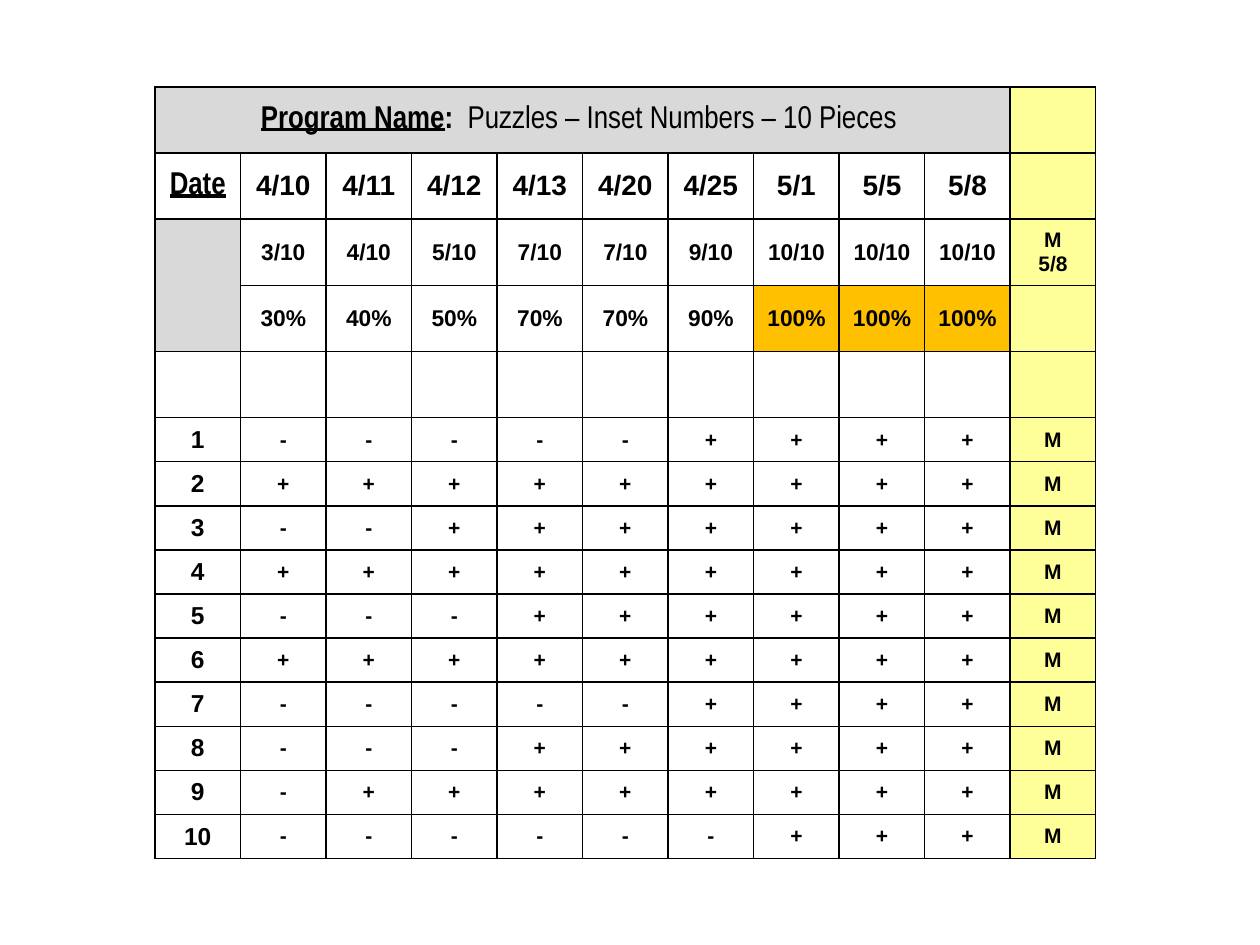
from dataclasses import dataclass

from lxml.etree import SubElement
from pptx import Presentation
from pptx.dml.color import RGBColor
from pptx.enum.text import MSO_ANCHOR, PP_ALIGN
from pptx.oxml.ns import qn
from pptx.table import Table, _Cell as Cell
from pptx.util import Inches, Pt

BLACK = RGBColor(0x00, 0x00, 0x00)
WHITE = RGBColor(0xFF, 0xFF, 0xFF)
GREY = RGBColor(0xD9, 0xD9, 0xD9)
YELLOW = RGBColor(0xFF, 0xFF, 0x99)
ORANGE = RGBColor(0xFF, 0xC0, 0x00)

LEFT, TOP, WIDTH = Inches(1.23), Inches(0.69), Inches(7.47)
PIECE_HEIGHT = Inches(0.35)
HEADER_HEIGHT = int(PIECE_HEIGHT * 1.5)
SIDE_MARGIN = Inches(0.05)
HEADER_ROWS = 5
PERCENT_ROW = 3


@dataclass(frozen=True)
class Style:
    size: int
    font: str = "Arial"
    bold: bool = True
    underline: bool = False


@dataclass(frozen=True)
class Session:
    date: str
    correct: int
    marks: str


TITLE = Style(18, "Arial Narrow")
TITLE_LABEL = Style(18, "Arial Narrow", underline=True)
PROGRAM = Style(18, "Arial Narrow", bold=False)
DATE = Style(16)
SCORE = Style(13)
PIECE = Style(14)
MARK = Style(12)

SESSIONS = [
    Session("4/10", 3, "-+-+-+----"),
    Session("4/11", 4, "-+-+-+--+-"),
    Session("4/12", 5, "-+++-+--+-"),
    Session("4/13", 7, "-+++++-++-"),
    Session("4/20", 7, "-+++++-++-"),
    Session("4/25", 9, "+++++++++-"),
    Session("5/1", 10, "++++++++++"),
    Session("5/5", 10, "++++++++++"),
    Session("5/8", 10, "++++++++++"),
]
PIECES = 10
MASTERY = len(SESSIONS) + 1


def write(cell: Cell, text: str, style: Style) -> None:
    """Append text to the last paragraph; each newline starts another one."""
    frame = cell.text_frame
    for number, line in enumerate(text.split("\n")):
        paragraph = frame.add_paragraph() if number else frame.paragraphs[-1]
        paragraph.alignment = PP_ALIGN.CENTER
        run = paragraph.add_run()
        run.text = line
        run.font.name = style.font
        run.font.size = Pt(style.size)
        run.font.bold = style.bold
        run.font.underline = style.underline
        run.font.color.rgb = BLACK


def fill_color(row: int, column: int) -> RGBColor:
    if column == MASTERY:
        return YELLOW
    if row == 0 or (column == 0 and row in (2, PERCENT_ROW)):
        return GREY
    if row == PERCENT_ROW and SESSIONS[column - 1].correct == PIECES:
        return ORANGE
    return WHITE


def format_cell(cell: Cell, color: RGBColor) -> None:
    cell.vertical_anchor = MSO_ANCHOR.MIDDLE
    cell.margin_left = cell.margin_right = SIDE_MARGIN
    properties = cell._tc.get_or_add_tcPr()
    for side in ("a:lnL", "a:lnR", "a:lnT", "a:lnB"):
        border = SubElement(properties, qn(side), w=str(Pt(1)))
        solid = SubElement(border, qn("a:solidFill"))
        SubElement(solid, qn("a:srgbClr"), val=str(BLACK))
    cell.fill.solid()
    cell.fill.fore_color.rgb = color


def format_grid(table: Table) -> None:
    table.first_row = table.horz_banding = False
    for column in table.columns:
        column.width = WIDTH // (MASTERY + 1)
    for row_number, row in enumerate(table.rows):
        row.height = HEADER_HEIGHT if row_number < HEADER_ROWS else PIECE_HEIGHT
        for column_number, cell in enumerate(row.cells):
            format_cell(cell, fill_color(row_number, column_number))
    table.cell(0, 0).merge(table.cell(0, MASTERY - 1))
    table.cell(2, 0).merge(table.cell(PERCENT_ROW, 0))


def write_headings(table: Table) -> None:
    heading = table.cell(0, 0)
    write(heading, "Program Name", TITLE_LABEL)
    write(heading, ":  ", TITLE)
    write(heading, "Puzzles – Inset Numbers – 10 Pieces ", PROGRAM)
    write(table.cell(1, 0), "Date", TITLE_LABEL)
    write(table.cell(2, MASTERY), "M\n5/8", MARK)


def write_results(table: Table) -> None:
    for column, session in enumerate(SESSIONS, start=1):
        write(table.cell(1, column), session.date, DATE)
        write(table.cell(2, column), f"{session.correct}/{PIECES}", SCORE)
        percent = 100 * session.correct // PIECES
        write(table.cell(PERCENT_ROW, column), f"{percent}%", SCORE)
        for row, mark in enumerate(session.marks, start=HEADER_ROWS):
            write(table.cell(row, column), mark, MARK)
    for piece in range(PIECES):
        row = HEADER_ROWS + piece
        write(table.cell(row, 0), str(piece + 1), PIECE)
        write(table.cell(row, MASTERY), "M", MARK)


def main() -> None:
    presentation = Presentation()
    presentation.slide_width = Inches(10)
    presentation.slide_height = Inches(7.5)
    slide = presentation.slides.add_slide(presentation.slide_layouts[6])
    height = HEADER_ROWS * HEADER_HEIGHT + PIECES * PIECE_HEIGHT
    table = slide.shapes.add_table(
        HEADER_ROWS + PIECES, MASTERY + 1, LEFT, TOP, WIDTH, height
    ).table
    format_grid(table)
    write_headings(table)
    write_results(table)
    presentation.save("out.pptx")


if __name__ == "__main__":
    main()
